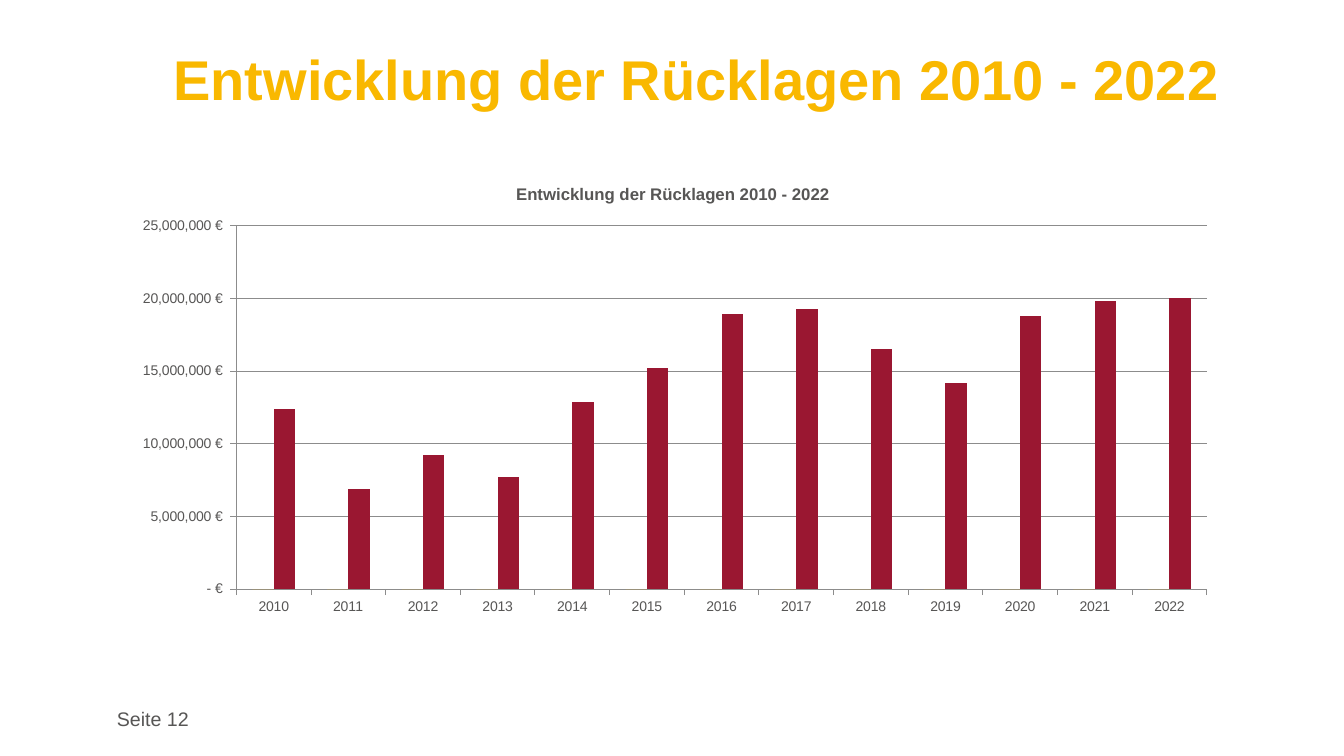
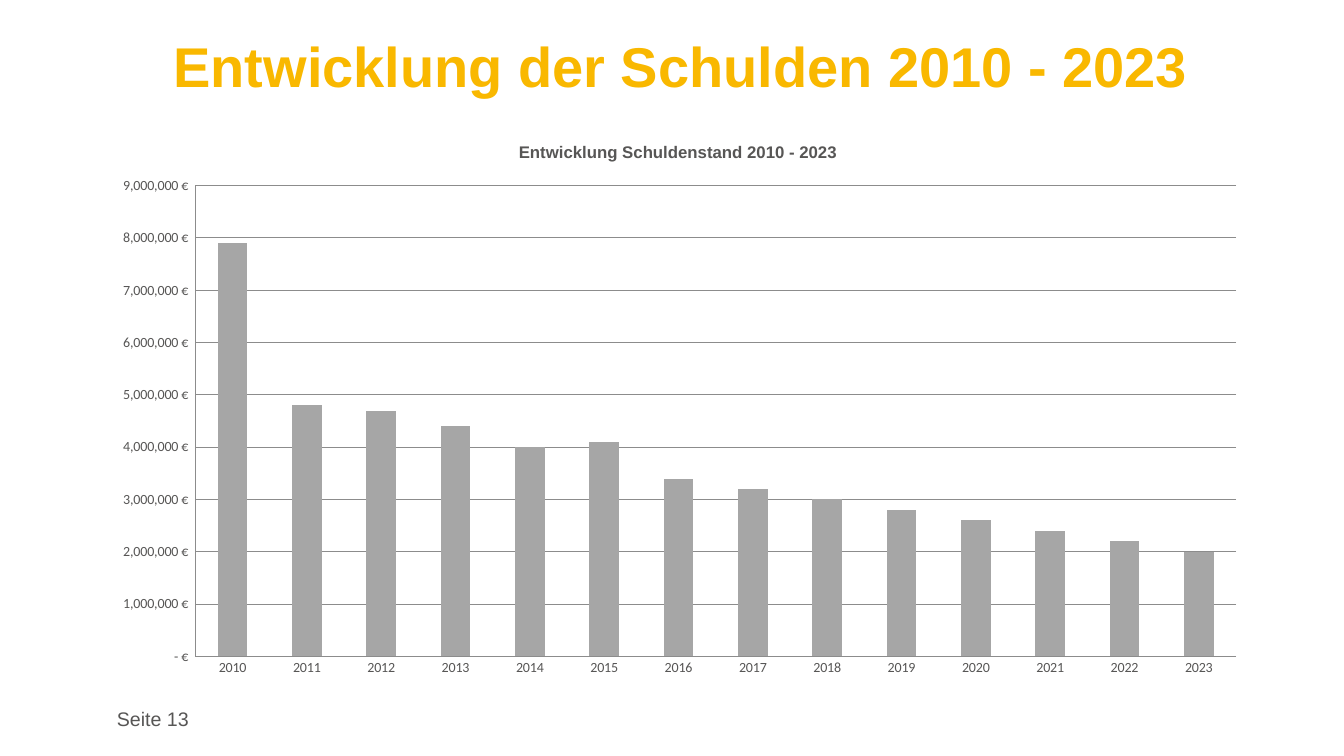
from pptx import Presentation
from pptx.chart.data import CategoryChartData as Data
from pptx.dml.color import RGBColor
from pptx.enum.chart import XL_CHART_TYPE as Kind, XL_TICK_MARK as Tick
from pptx.enum.text import MSO_ANCHOR as Anchor, MSO_AUTO_SIZE as Fit, PP_ALIGN as Align
from pptx.util import Inches, Pt

GOLD = RGBColor(0xF9, 0xB8, 0x00)
RED = RGBColor(0x9A, 0x17, 0x31)
GREY = RGBColor(0xA6, 0xA6, 0xA6)
LINE = RGBColor(0x8C, 0x8C, 0x8C)
TEXT = RGBColor(0x57, 0x56, 0x55)
WHITE = RGBColor(0xFF, 0xFF, 0xFF)
FONT = "Arial"
EURO = r'_-* #,##0\ [$€-407]_-;\-* #,##0\ [$€-407]_-;_-* "-"\ [$€-407]_-;_-@_-'
START = 2010

SAVED = [12400000, 6900000, 9200000, 7700000, 12900000, 15200000, 18900000,
         19300000, 16500000, 14200000, 18800000, 19800000, 20000000]
DEBTS = [7900000, 4800000, 4700000, 4400000, 4000000, 4100000, 3400000,
         3200000, 3000000, 2800000, 2600000, 2400000, 2200000, 2000000]


def style(font, size, color, bold=False, name=FONT):
    font.name = name
    font.size = Pt(size)
    font.bold = bold
    font.color.rgb = color


def place(shape, box):
    shape.left, shape.top, shape.width, shape.height = map(Inches, box)


def add_title(slide, text, box):
    title = slide.shapes.title
    place(title, box)
    frame = title.text_frame
    frame.text = text
    frame.word_wrap = True
    frame.auto_size = Fit.NONE
    frame.vertical_anchor = Anchor.MIDDLE
    para = frame.paragraphs[0]
    para.alignment = Align.LEFT
    para.line_spacing = 0.9
    style(para.runs[0].font, 40, GOLD, True)


def add_page(slide, number):
    label = slide.shapes.add_textbox(*map(Inches, (1.06, 6.93, 1.69, 0.4)))
    label.fill.solid()
    label.fill.fore_color.rgb = WHITE
    frame = label.text_frame
    frame.word_wrap = True
    frame.vertical_anchor = Anchor.MIDDLE
    frame.text = f"Seite {number}"
    style(frame.paragraphs[0].runs[0].font, 14, TEXT)


def set_axis(axis, tick):
    axis.major_tick_mark = tick
    axis.minor_tick_mark = Tick.NONE
    axis.format.line.color.rgb = LINE
    axis.format.line.width = Pt(0.75)


def add_chart(slide, box, head, series, font, tick, top, step):
    data = Data(number_format=EURO)
    count = len(series[-1][0])
    data.categories = [str(START + i) for i in range(count)]
    for i, (vals, _) in enumerate(series, 1):
        data.add_series(f"Series {i}", vals)
    chart = slide.shapes.add_chart(
        Kind.COLUMN_CLUSTERED, *map(Inches, box), data).chart
    style(chart.font, 10, TEXT, name=font)
    chart.has_legend = False
    chart.has_title = True
    frame = chart.chart_title.text_frame
    frame.text = head
    style(frame.paragraphs[0].runs[0].font, 12, TEXT, True)
    chart.chart_title.include_in_layout = False

    set_axis(chart.category_axis, tick)
    axis = chart.value_axis
    set_axis(axis, tick)
    axis.minimum_scale = 0
    axis.maximum_scale = top
    axis.major_unit = step
    axis.tick_labels.number_format = EURO
    axis.tick_labels.number_format_is_linked = False
    axis.has_major_gridlines = True
    grid = axis.major_gridlines.format.line
    grid.color.rgb = LINE
    grid.width = Pt(0.75)

    plot = chart.plots[0]
    plot.gap_width = 150
    plot.overlap = 0
    plot.vary_by_categories = False
    for bars, (_, color) in zip(plot.series, series):
        bars.format.fill.solid()
        bars.format.fill.fore_color.rgb = color
        bars.invert_if_negative = False


def add_slide(deck, number, title, box):
    slide = deck.slides.add_slide(deck.slide_layouts[5])
    add_page(slide, number)
    add_title(slide, title, box)
    return slide


def main():
    deck = Presentation()
    deck.slide_width = Inches(13.33)
    deck.slide_height = Inches(7.5)

    head = "Entwicklung der Rücklagen 2010 - 2022"
    slide = add_slide(deck, 12, head, (1.62, 0.3, 10.86, 1.04))
    add_chart(slide, (1.16, 1.65, 11.03, 4.54), head,
              [([0] * len(SAVED), GOLD), (SAVED, RED)],
              FONT, Tick.OUTSIDE, 25000000, 5000000)

    slide = add_slide(deck, 13, "Entwicklung der Schulden 2010 - 2023",
                      (1.62, 0.17, 10.61, 1.04))
    add_chart(slide, (0.96, 1.21, 11.53, 5.61),
              "Entwicklung Schuldenstand 2010 - 2023", [(DEBTS, GREY)],
              "Calibri", Tick.NONE, 9000000, 1000000)

    deck.save("out.pptx")


if __name__ == "__main__":
    main()
